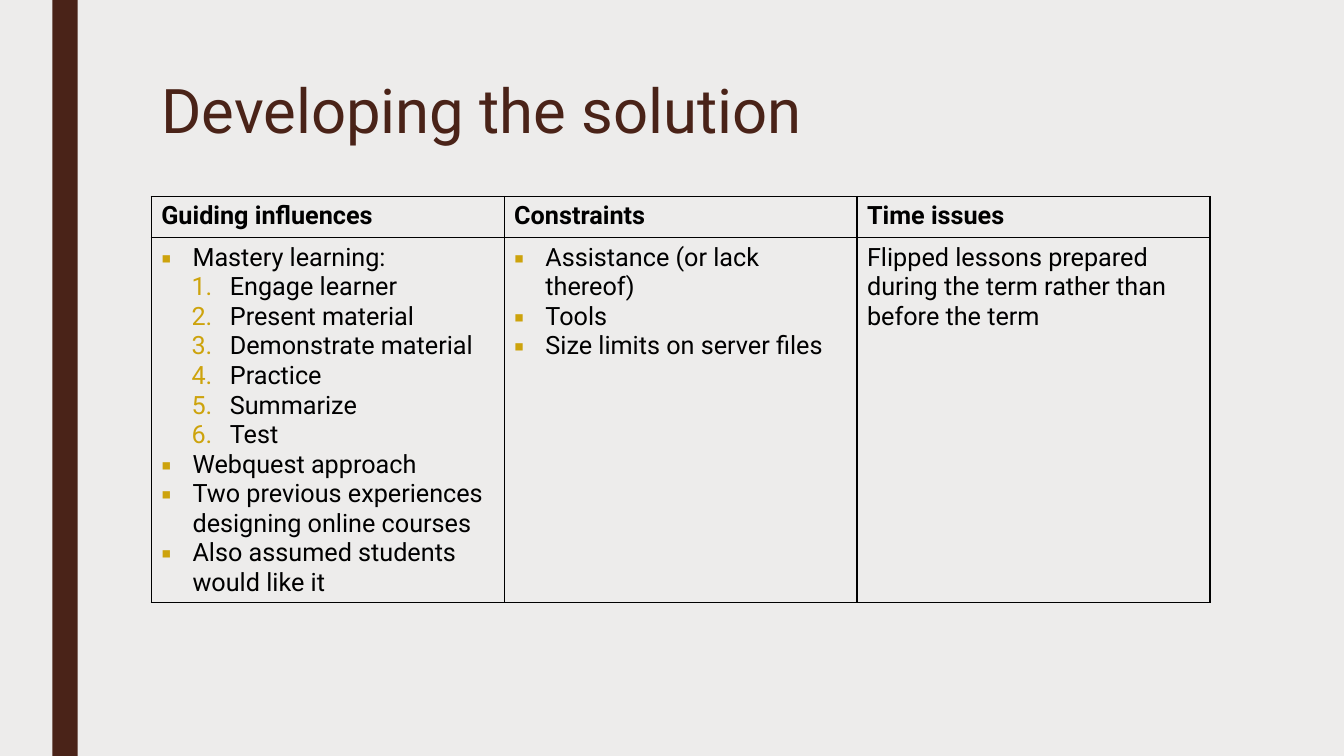
from dataclasses import dataclass

from lxml.etree import SubElement
from pptx import Presentation
from pptx.dml.color import RGBColor
from pptx.enum.shapes import MSO_SHAPE
from pptx.enum.text import MSO_ANCHOR, MSO_AUTO_SIZE, PP_ALIGN
from pptx.oxml import parse_xml
from pptx.oxml.ns import nsdecls, qn
from pptx.util import Inches, Pt


@dataclass(frozen=True)
class Theme:
    """Colours, font and type sizes of the deck."""
    back: str = "EDECEB"
    brand: str = "4A2318"
    bullet: str = "CDA30C"
    ink: str = "000000"
    font: str = "Roboto"
    title: int = 44
    body: int = 18


THEME = Theme()
UNIT = 0.25
BULLET, STEP, PLAIN = "bullet", "step", "plain"
INDENTS = {BULLET: (0.31, -0.31), STEP: (0.68, -0.38)}

COLUMNS = {
    "Guiding influences": [
        (BULLET, "Mastery learning:"),
        (STEP, "Engage learner"),
        (STEP, "Present material"),
        (STEP, "Demonstrate material"),
        (STEP, "Practice"),
        (STEP, "Summarize"),
        (STEP, "Test"),
        (BULLET, "Webquest approach"),
        (BULLET, "Two previous experiences designing online courses"),
        (BULLET, "Also assumed students would like it"),
    ],
    "Constraints": [
        (BULLET, "Assistance (or lack thereof)"),
        (BULLET, "Tools"),
        (BULLET, "Size limits on server files"),
    ],
    "Time issues": [
        (PLAIN, "Flipped lessons prepared during the term rather than before the term"),
    ],
}


def grid(*units):
    """Turn grid units into slide lengths."""
    return [Inches(UNIT * u) for u in units]


def style(p, size, color, bold=False):
    """Format every run of a paragraph."""
    for r in p.runs:
        r.font.name = THEME.font
        r.font.size = Pt(size)
        r.font.bold = bold
        r.font.color.rgb = RGBColor.from_string(color)


def mark(p, kind):
    """Give a paragraph its indent and its bullet or number."""
    left, hang = INDENTS[kind]
    p.level = 1 if kind == STEP else 0
    pPr = p._p.get_or_add_pPr()
    pPr.set("marL", str(Inches(left)))
    pPr.set("indent", str(Inches(hang)))
    SubElement(SubElement(pPr, qn("a:buClr")), qn("a:srgbClr"), val=THEME.bullet)
    if kind == STEP:
        SubElement(pPr, qn("a:buFont"), typeface="+mj-lt")
        SubElement(pPr, qn("a:buAutoNum"), type="arabicPeriod")
    else:
        SubElement(pPr, qn("a:buFont"), typeface=THEME.font)
        SubElement(pPr, qn("a:buChar"), char="▪")


def outline(cell):
    """Clear a cell's fill and rule its four sides."""
    cell.fill.background()
    tcPr = cell._tc.get_or_add_tcPr()
    for i, side in enumerate(("lnL", "lnR", "lnT", "lnB")):
        tcPr.insert(i, parse_xml(
            f'<a:{side} {nsdecls("a")} w="{Pt(1)}"><a:solidFill>'
            f'<a:srgbClr val="{THEME.ink}"/></a:solidFill></a:{side}>'))


def fill_cell(cell, items, bold=False):
    """Write a list of (kind, text) items into a ruled cell."""
    outline(cell)
    tf = cell.text_frame
    tf.text = "\n".join(text for _, text in items)
    for p, (kind, _) in zip(tf.paragraphs, items):
        style(p, THEME.body, THEME.ink, bold)
        if kind in INDENTS:
            mark(p, kind)


def add_bar(s, box):
    """Draw the vertical brand bar."""
    bar = s.shapes.add_shape(MSO_SHAPE.RECTANGLE, *box)
    bar.shadow.inherit = False
    bar.fill.solid()
    bar.fill.fore_color.rgb = RGBColor.from_string(THEME.brand)
    bar.line.fill.background()


def add_title(s, box, text):
    """Place and format the title placeholder."""
    sp = s.shapes.title
    sp.left, sp.top, sp.width, sp.height = box
    tf = sp.text_frame
    tf.text = text
    tf.word_wrap = True
    tf.auto_size = MSO_AUTO_SIZE.NONE
    tf.vertical_anchor = MSO_ANCHOR.TOP
    p = tf.paragraphs[0]
    p.alignment = PP_ALIGN.LEFT
    p.line_spacing = 0.89
    style(p, THEME.title, THEME.brand)


def add_columns(s, box, columns):
    """Build a table with one headed column per topic."""
    left, top, width, height = box
    table = s.shapes.add_table(2, len(columns), left, top, width, height).table
    table.horz_banding = False
    head = Inches(0.41)
    table.rows[0].height = head
    table.rows[1].height = height - head
    for c, (heading, items) in enumerate(columns.items()):
        fill_cell(table.cell(0, c), [(PLAIN, heading)], bold=True)
        fill_cell(table.cell(1, c), items)


def add_table_slide(prs, title, columns):
    """Add a slide with a side bar, a title and a table."""
    s = prs.slides.add_slide(prs.slide_layouts[5])
    s.background.fill.solid()
    s.background.fill.fore_color.rgb = RGBColor.from_string(THEME.back)
    add_bar(s, grid(2.08, 0, 1, 30))
    add_title(s, grid(6, 3, 42, 6.5), title)
    add_columns(s, grid(6, 7.8, 42, 16.1), columns)


def main():
    """Build and save the deck."""
    prs = Presentation()
    prs.slide_width, prs.slide_height = Inches(13.33), Inches(7.5)
    add_table_slide(prs, "Developing the solution", COLUMNS)
    prs.save("out.pptx")


if __name__ == "__main__":
    main()
